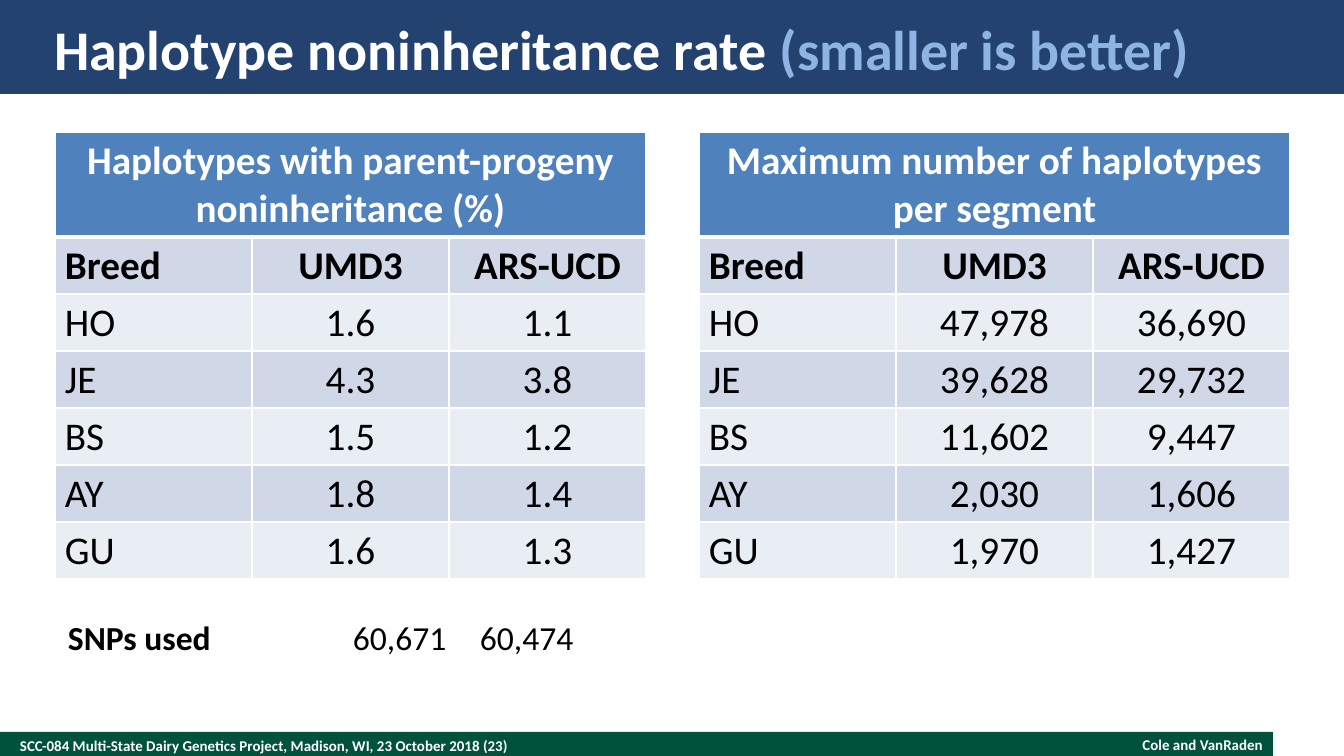
from dataclasses import dataclass

from lxml import etree
from pptx import Presentation
from pptx.dml.color import RGBColor
from pptx.enum.shapes import MSO_SHAPE
from pptx.enum.text import MSO_ANCHOR, PP_ALIGN
from pptx.oxml.ns import qn
from pptx.util import Emu, Pt

RECTANGLE = MSO_SHAPE.RECTANGLE
MIDDLE = MSO_ANCHOR.MIDDLE
LEFT, CENTER, RIGHT = PP_ALIGN.LEFT, PP_ALIGN.CENTER, PP_ALIGN.RIGHT
EMU_PER_PX = 914400 / 134.4


def px(value):
    return Emu(round(value * EMU_PER_PX))


@dataclass(frozen=True)
class Theme:
    font: str = "Calibri"
    white: str = "FFFFFF"
    black: str = "000000"
    title_bar: str = "244270"
    title_accent: str = "8EB4E3"
    footer_bar: str = "00523C"
    table_header: str = "4F81BD"
    bands: tuple = ("D0D8E8", "E9EDF4")
    title_size: int = 30
    table_size: int = 21
    note_size: int = 18
    footer_size: int = 8


class SlideBuilder:
    def __init__(self, slide, theme):
        self.slide = slide
        self.theme = theme

    def style(self, font, size, color, bold=None):
        font.name = self.theme.font
        font.size = Pt(size)
        font.color.rgb = RGBColor.from_string(color)
        font.bold = bold

    def bar(self, left, top, width, height, color):
        shape = self.slide.shapes.add_shape(RECTANGLE, px(left), px(top), px(width), px(height))
        shape.shadow.inherit = False
        shape.fill.solid()
        shape.fill.fore_color.rgb = RGBColor.from_string(color)
        shape.line.fill.background()

    def text_box(self, left, top, width, height, text, size, color,
                 bold=None, align=LEFT, inset=(0, 0), tabs=()):
        """Add one paragraph and return it, so that more runs can follow."""
        box = self.slide.shapes.add_textbox(px(left), px(top), px(width), px(height))
        frame = box.text_frame
        frame.word_wrap = True
        frame.vertical_anchor = MIDDLE
        frame.margin_left = frame.margin_right = px(inset[0])
        frame.margin_top = frame.margin_bottom = px(inset[1])
        paragraph = frame.paragraphs[0]
        paragraph.alignment = align
        if tabs:
            tab_list = etree.SubElement(paragraph._p.get_or_add_pPr(), qn("a:tabLst"))
            for position in tabs:
                etree.SubElement(tab_list, qn("a:tab"), pos=str(px(position)), algn="l")
        self.style(paragraph.font, size, color, bold)
        paragraph.add_run().text = text
        return paragraph

    def cell_borders(self, cell, top, bottom):
        properties = cell._tc.get_or_add_tcPr()
        for side, width in (("L", 1), ("R", 1), ("T", top), ("B", bottom)):
            line = etree.SubElement(properties, qn(f"a:ln{side}"), w=str(Pt(width)))
            fill = etree.SubElement(line, qn("a:solidFill"))
            etree.SubElement(fill, qn("a:srgbClr"), val=self.theme.white)

    def table(self, left, top, column_width, header_height, row_height, heading, rows):
        theme = self.theme
        column_count = len(rows[0])
        height = header_height + row_height * len(rows)
        table = self.slide.shapes.add_table(
            len(rows) + 1, column_count, px(left), px(top),
            px(column_width * column_count), px(height)).table
        for column in table.columns:
            column.width = px(column_width)
        for index, row in enumerate(table.rows):
            row.height = px(row_height if index else header_height)
        table.cell(0, 0).merge(table.cell(0, column_count - 1))

        heading_row = [heading] + [""] * (column_count - 1)
        for row_index, values in enumerate([heading_row, *rows]):
            is_heading = row_index == 0
            for column_index, value in enumerate(values):
                cell = table.cell(row_index, column_index)
                cell.margin_left = cell.margin_right = px(10)
                cell.margin_top = cell.margin_bottom = px(5)
                self.cell_borders(cell, top=3 if row_index == 1 else 1,
                                  bottom=3 if is_heading else 1)
                color = theme.table_header if is_heading else theme.bands[(row_index - 1) % 2]
                cell.fill.solid()
                cell.fill.fore_color.rgb = RGBColor.from_string(color)
                paragraph = cell.text_frame.paragraphs[0]
                paragraph.alignment = CENTER if is_heading or column_index else LEFT
                self.style(paragraph.font, theme.table_size,
                           theme.white if is_heading else theme.black, row_index < 2)
                if value:
                    paragraph.add_run().text = value


COLUMN_NAMES = ("Breed", "UMD3", "ARS-UCD")
BREEDS = ("HO", "JE", "BS", "AY", "GU")
TABLES = (
    ("Haplotypes with parent-progeny noninheritance (%)",
     ("1.6", "4.3", "1.5", "1.8", "1.6"),
     ("1.1", "3.8", "1.2", "1.4", "1.3")),
    ("Maximum number of haplotypes per segment",
     ("47,978", "39,628", "11,602", "2,030", "1,970"),
     ("36,690", "29,732", "9,447", "1,606", "1,427")),
)


def main():
    presentation = Presentation()
    presentation.slide_width, presentation.slide_height = px(1344), px(756)
    theme = Theme()
    slide = presentation.slides.add_slide(presentation.slide_layouts[6])
    builder = SlideBuilder(slide, theme)

    # Footer and title bars
    builder.bar(0, 732, 1273, 27, theme.footer_bar)
    builder.bar(0, 0, 1344, 94, theme.title_bar)
    builder.text_box(20, 732, 874, 27,
                     "SCC-084 Multi-State Dairy Genetics Project, Madison, WI, 23 October 2018 (23)",
                     theme.footer_size, theme.white, bold=True)
    builder.text_box(968, 736, 295, 17, "Cole and VanRaden",
                     theme.footer_size, theme.white, bold=True, align=RIGHT)

    # Title
    title = builder.text_box(54, 13, 1236, 70, "Haplotype noninheritance rate ",
                             theme.title_size, theme.white, bold=True)
    accent = title.add_run()
    accent.text = "(smaller is better)"
    accent.font.color.rgb = RGBColor.from_string(theme.title_accent)

    # Breed tables
    for index, (heading, umd_values, ars_values) in enumerate(TABLES):
        rows = [COLUMN_NAMES, *zip(BREEDS, umd_values, ars_values)]
        builder.table(55 + 644 * index, 132, 197, 105, 57, heading, rows)

    # SNP counts
    note = builder.text_box(55, 610, 536, 54, "SNPs used", theme.note_size, theme.black,
                            inset=(13, 7), tabs=(285, 412))
    note.runs[0].font.bold = True
    note.add_run().text = "\t60,671\t60,474"

    presentation.save("out.pptx")


if __name__ == "__main__":
    main()
